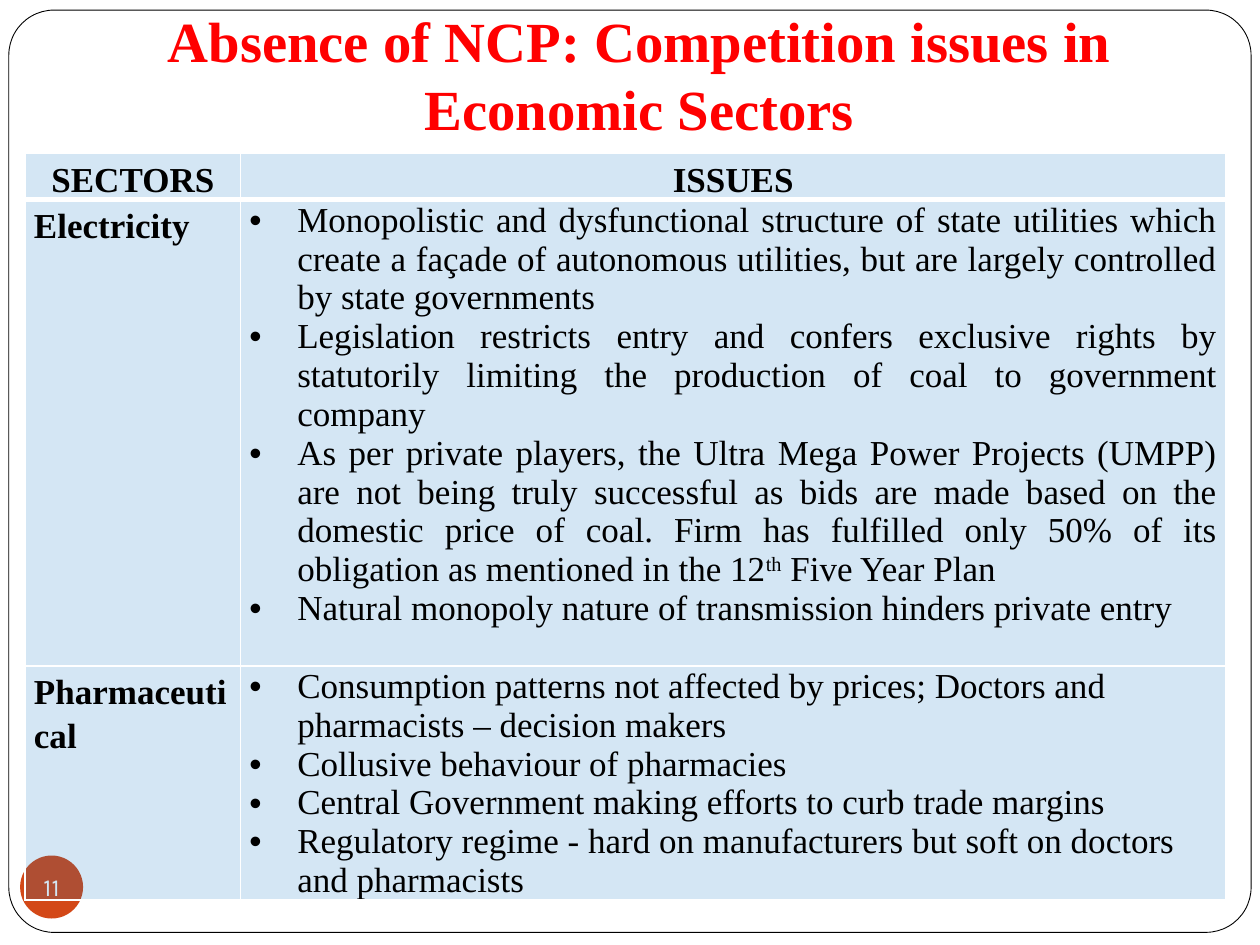
from dataclasses import dataclass

from lxml.etree import SubElement
from pptx import Presentation
from pptx.dml.color import RGBColor
from pptx.enum.shapes import MSO_SHAPE as Shape
from pptx.enum.text import MSO_ANCHOR as Anchor, MSO_AUTO_SIZE as AutoSize, PP_ALIGN as Align
from pptx.oxml.ns import qn
from pptx.util import Inches, Pt

SERIF = "Times New Roman"
TINT, TINT_ALPHA = "0070C0", 17
HEADER_RULE, CELL_RULE = 3, 1
INDENT = 0.38


@dataclass
class Sector:
    name: str
    issues: list[str]
    align: Align
    height: float


# A caret pair marks superscript text
SECTORS = [
    Sector("Electricity", [
        "Monopolistic and dysfunctional structure of state utilities which create a façade of "
        "autonomous utilities, but are largely controlled by state governments",
        "Legislation restricts entry and confers exclusive rights by statutorily limiting the "
        "production of coal to government company",
        "As per private players, the Ultra Mega Power Projects (UMPP) are not being truly "
        "successful as bids are made based on the domestic price of coal. Firm has fulfilled only "
        "50% of its obligation as mentioned in the 12^th^ Five Year Plan",
        "Natural monopoly nature of transmission hinders private entry",
    ], Align.JUSTIFY, 3.7),
    Sector("Pharmaceutical", [
        "Consumption patterns not affected by prices; Doctors and pharmacists – decision makers",
        "Collusive behaviour of pharmacies",
        "Central Government making efforts to curb trade margins",
        "Regulatory regime - hard on manufacturers but soft on doctors and pharmacists",
    ], Align.LEFT, 1.86),
]
HEADER_HEIGHT = 0.36


def color(value: str) -> RGBColor:
    return RGBColor.from_string(value)


def set_insets(frame, left: float, top: float, right: float, bottom: float) -> None:
    frame.margin_left, frame.margin_top = Inches(left), Inches(top)
    frame.margin_right, frame.margin_bottom = Inches(right), Inches(bottom)


def write(para, text: str, *, size: float = 20, font: str = SERIF, fill: str = "000000",
          bold: bool = False, align: Align = Align.LEFT, spacing: float = 1.0,
          after: float = 0) -> None:
    para.alignment, para.line_spacing = align, spacing
    para.space_before, para.space_after = Pt(0), Pt(after)
    for index, part in enumerate(text.split("^")):
        span = para.add_run()
        span.text = part
        span.font.size, span.font.name, span.font.bold = Pt(size), font, bold
        span.font.color.rgb = color(fill)
        if index % 2:
            span._r.get_or_add_rPr().set("baseline", "30000")


def add_bullet(para) -> None:
    props = para._p.get_or_add_pPr()
    props.set("marL", str(Inches(INDENT)))
    props.set("indent", str(-Inches(INDENT)))
    SubElement(props, qn("a:buFont"), typeface="Arial")
    SubElement(props, qn("a:buChar"), char="•")


def style_cell(cell, top: float, bottom: float) -> None:
    set_insets(cell, 0.07, 0.01, 0.07, 0)
    props = cell._tc.get_or_add_tcPr()
    for side, width in (("L", CELL_RULE), ("R", CELL_RULE), ("T", top), ("B", bottom)):
        line = SubElement(props, qn(f"a:ln{side}"), w=str(Pt(width)))
        SubElement(SubElement(line, qn("a:solidFill")), qn("a:srgbClr"), val="FFFFFF")
    cell.fill.solid()
    cell.fill.fore_color.rgb = color(TINT)
    tint = props.find(qn("a:solidFill")).find(qn("a:srgbClr"))
    SubElement(tint, qn("a:alpha"), val=str(TINT_ALPHA * 1000))


def add_shape(page, kind: Shape, box: tuple[float, ...], fill: str):
    shape = page.shapes.add_shape(kind, *map(Inches, box))
    shape.shadow.inherit = False
    shape.fill.solid()
    shape.fill.fore_color.rgb = color(fill)
    shape.line.fill.background()
    return shape


def add_title(page, text: str) -> None:
    title = page.shapes.title
    title.left, title.top, title.width, title.height = map(Inches, (0.43, -0.02, 9.29, 1.25))
    frame = title.text_frame
    frame.word_wrap, frame.auto_size = True, AutoSize.NONE
    frame.vertical_anchor = Anchor.BOTTOM
    set_insets(frame, 0.1, 0.05, 0.1, 0.1)
    write(frame.paragraphs[0], text, size=32.4, fill="FF0000", bold=True, align=Align.CENTER)


def add_page_border(page) -> None:
    border = add_shape(page, Shape.ROUNDED_RECTANGLE, (0.07, 0.08, 9.86, 7.32), "FFFFFF")
    border.adjustments[0] = 0.049
    border.line.color.rgb = color("000000")
    border.line.width = Pt(0.5)
    page.shapes.title.element.addprevious(border.element)


def add_page_number(page, number: str) -> None:
    badge = add_shape(page, Shape.OVAL, (0.16, 6.79, 0.5, 0.5), "D34817")
    frame = badge.text_frame
    frame.word_wrap, frame.vertical_anchor = False, Anchor.MIDDLE
    set_insets(frame, 0, 0, 0, 0)
    write(frame.paragraphs[0], number, size=14, font="Karla", fill="FFFFFF", align=Align.CENTER)


def add_sector_table(page) -> None:
    heights = [HEADER_HEIGHT] + [sector.height for sector in SECTORS]
    box = map(Inches, (0.2, 1.22, 9.53, sum(heights)))
    table = page.shapes.add_table(len(heights), 2, *box).table
    table.first_row = table.horz_banding = False
    for column, width in zip(table.columns, (1.71, 7.82)):
        column.width = Inches(width)
    for index, (row, height) in enumerate(zip(table.rows, heights)):
        row.height = Inches(height)
        for cell in row.cells:
            style_cell(cell, HEADER_RULE if index == 1 else CELL_RULE,
                       HEADER_RULE if index == 0 else CELL_RULE)

    # Header row
    for column, heading in enumerate(("SECTORS", "ISSUES")):
        write(table.cell(0, column).text_frame.paragraphs[0], heading, bold=True,
              align=Align.CENTER, spacing=1.15, after=10)

    # One row for each sector
    for row, sector in enumerate(SECTORS, start=1):
        write(table.cell(row, 0).text_frame.paragraphs[0], sector.name, bold=True,
              spacing=1.15, after=10)
        frame = table.cell(row, 1).text_frame
        for index, issue in enumerate(sector.issues):
            para = frame.add_paragraph() if index else frame.paragraphs[0]
            write(para, issue, align=sector.align)
            add_bullet(para)


def main() -> None:
    deck = Presentation()
    deck.slide_width, deck.slide_height = Inches(10), Inches(7.5)
    page = deck.slides.add_slide(deck.slide_layouts[5])
    add_title(page, "Absence of NCP: Competition issues in Economic Sectors")
    add_page_border(page)
    add_page_number(page, "11")
    add_sector_table(page)
    deck.save("out.pptx")


if __name__ == "__main__":
    main()
